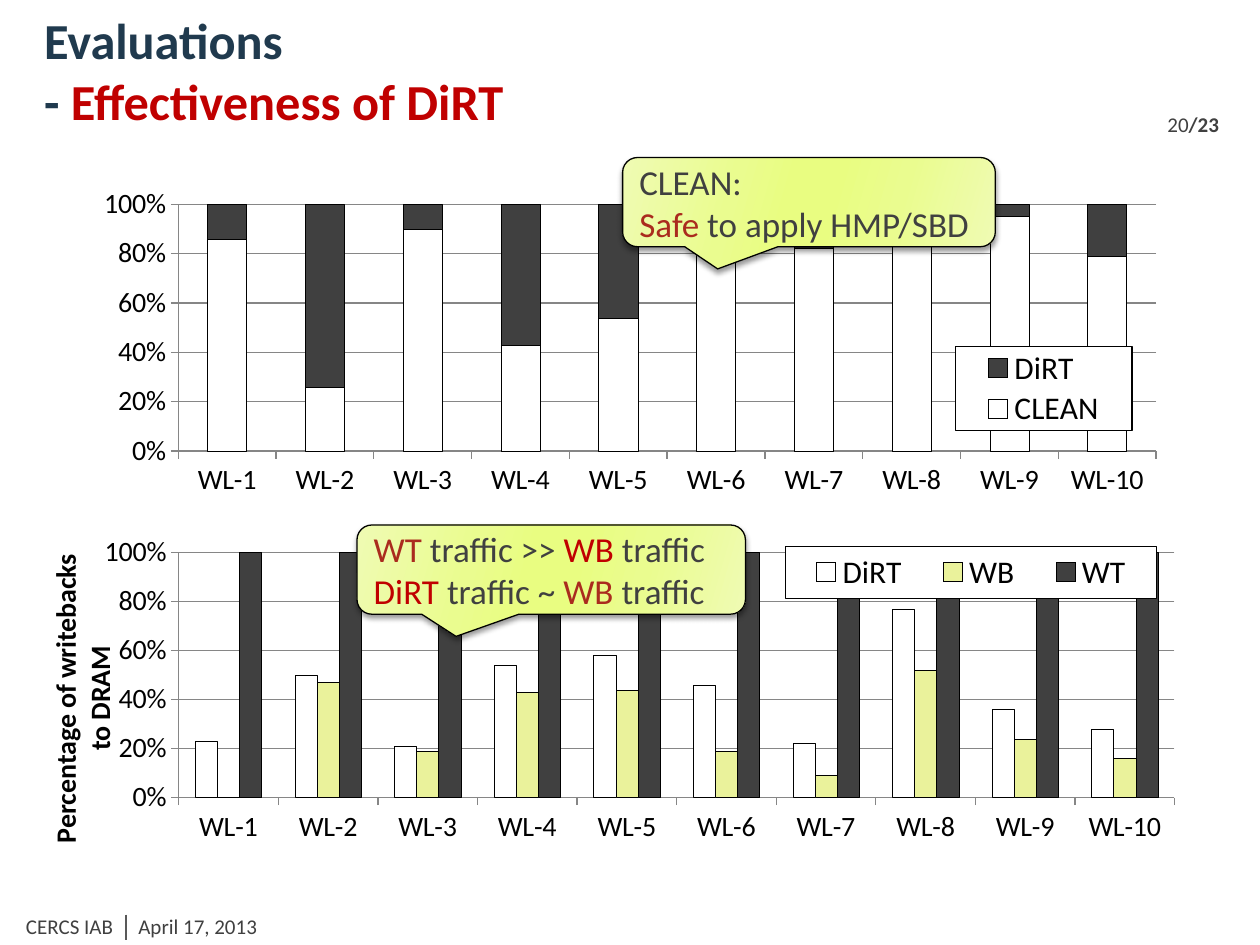
from lxml.etree import SubElement
from pptx import Presentation
from pptx.chart.data import CategoryChartData as ChartData
from pptx.dml.color import RGBColor
from pptx.enum.chart import XL_CHART_TYPE as ChartType, XL_LEGEND_POSITION as LegendPosition
from pptx.enum.chart import XL_TICK_MARK as TickMark
from pptx.enum.shapes import MSO_CONNECTOR as Connector, MSO_SHAPE as Shape
from pptx.enum.text import MSO_ANCHOR as Anchor, MSO_AUTO_SIZE as AutoSize, PP_ALIGN as Align
from pptx.oxml import parse_xml
from pptx.oxml.ns import nsdecls, qn
from pptx.util import Inches, Pt

COLORS = {
    "navy": "203A4E", "red": "C00000", "brick": "AA2B1E", "dark": "404040",
    "rule": "595959", "grid": "868686", "black": "000000", "white": "FFFFFF", "lime": "EAF29B",
}
GRADIENT = {0: "EFFBB3", 30: "EAFC8F", 45: "E9FD81", 55: "E9FD81", 73: "EAFC8F", 100: "EFFBB3"}
FONT = "Calibri"
COLUMNS, ROWS = 120, 90
WORKLOADS = [f"WL-{number}" for number in range(1, 11)]
BLOCKS = {
    "CLEAN": ("white", [0.86, 0.26, 0.9, 0.43, 0.54, 0.91, 0.82, 0.88, 0.95, 0.79]),
    "DiRT": ("dark", [0.14, 0.74, 0.1, 0.57, 0.46, 0.09, 0.18, 0.12, 0.05, 0.21]),
}
WRITEBACKS = {
    "DiRT": ("white", [0.23, 0.5, 0.21, 0.54, 0.58, 0.46, 0.22, 0.77, 0.36, 0.28]),
    "WB": ("lime", [0, 0.47, 0.19, 0.43, 0.44, 0.19, 0.09, 0.52, 0.24, 0.16]),
    "WT": ("dark", [1] * 10),
}


def color(name):
    return RGBColor.from_string(COLORS[name])


def cells(column, row, width, height):
    unit_x, unit_y = Inches(10) / COLUMNS, Inches(7.5) / ROWS
    return [round(value) for value in
            (column * unit_x, row * unit_y, width * unit_x, height * unit_y)]


def set_font(font, size, name=None, bold=None):
    font.name, font.size, font.bold = FONT, Pt(size), bold
    if name:
        font.color.rgb = color(name)


def set_line(line, name, width):
    line.color.rgb = color(name)
    line.width = Pt(width)


def write_runs(paragraph, runs):
    for text, name in runs:
        run = paragraph.add_run()
        run.text = text
        run.font.color.rgb = color(name)


def add_title(slide):
    title = slide.shapes.title
    title.left, title.top, title.width, title.height = cells(3, 2, 111, 11)
    frame = title.text_frame
    frame.auto_size = AutoSize.NONE
    frame.vertical_anchor = Anchor.BOTTOM
    paragraph = frame.paragraphs[0]
    paragraph.alignment = Align.LEFT
    set_font(paragraph.font, 28.8, bold=True)
    write_runs(paragraph, [("Evaluations", "navy")])
    paragraph.add_line_break()
    write_runs(paragraph, [("- ", "navy"), ("Effectiveness of DiRT", "red")])


def add_label(slide, place, text, bold_text=""):
    frame = slide.shapes.add_textbox(*cells(*place)).text_frame
    frame.word_wrap = False
    paragraph = frame.paragraphs[0]
    set_font(paragraph.font, 12, "dark")
    paragraph.add_run().text = text
    if bold_text:
        run = paragraph.add_run()
        run.text = bold_text
        run.font.bold = True


def add_rule(slide, column, top, bottom):
    x, y, _, height = cells(column, top, 0, bottom - top)
    rule = slide.shapes.add_connector(Connector.STRAIGHT, x, y, x, y + height)
    set_line(rule.line, "rule", 1)
    SubElement(rule._element.spPr, qn("a:effectLst"))


def set_layout(element, before, inner=False, **shares):
    for old in element.findall(qn("c:layout")):
        element.remove(old)
    layout = parse_xml(f"<c:layout {nsdecls('c')}><c:manualLayout/></c:layout>")
    values = {"layoutTarget": "inner"} if inner else {}
    values.update(xMode="edge", yMode="edge", **shares)
    for tag, value in values.items():
        SubElement(layout[0], qn(f"c:{tag}")).set("val", str(value))
    if before is None:
        element.insert(0, layout)
    else:
        element.find(qn(before)).addnext(layout)


def style_axes(chart):
    for axis in (chart.category_axis, chart.value_axis):
        axis.major_tick_mark = TickMark.OUTSIDE
        axis.minor_tick_mark = TickMark.NONE
        set_line(axis.format.line, "grid", 0.75)
    axis.minimum_scale, axis.maximum_scale, axis.major_unit = 0, 1, 0.2
    axis.tick_labels.number_format = "0%"
    axis.tick_labels.number_format_is_linked = False
    axis.has_major_gridlines = True
    set_line(axis.major_gridlines.format.line, "grid", 0.75)


def style_legend(chart, place):
    chart.has_legend = True
    legend = chart.legend
    legend.position = LegendPosition.RIGHT
    legend.include_in_layout = True
    set_font(legend.font, 18, "black")
    set_layout(legend._element, "c:legendPos", **place)
    legend._element.find(qn("c:txPr")).addprevious(parse_xml(
        f'<c:spPr {nsdecls("c", "a")}>'
        f'<a:solidFill><a:srgbClr val="{COLORS["white"]}"/></a:solidFill>'
        f'<a:ln w="9525"><a:solidFill><a:srgbClr val="{COLORS["black"]}"/></a:solidFill></a:ln>'
        '</c:spPr>'))


def add_columns(slide, kind, place, series_table, plot_place, legend_place):
    data = ChartData(number_format="0%")
    data.categories = WORKLOADS
    for name, (_, values) in series_table.items():
        data.add_series(name, values)
    chart = slide.shapes.add_chart(kind, *cells(*place), data).chart
    chart.has_title = False
    set_font(chart.font, 16, "black")
    plot = chart.plots[0]
    plot.gap_width = 150
    plot.overlap = 100 if kind == ChartType.COLUMN_STACKED else 0
    plot.vary_by_categories = False
    for series, (fill_name, _) in zip(plot.series, series_table.values()):
        series.format.fill.solid()
        series.format.fill.fore_color.rgb = color(fill_name)
        set_line(series.format.line, "black", 0.25)
    style_axes(chart)
    style_legend(chart, legend_place)
    set_layout(chart._chartSpace.chart.plotArea, None, inner=True, **plot_place)
    return chart


def add_axis_title(axis, lines, x, y):
    title = axis.axis_title
    frame = title.text_frame
    frame.text = "\n".join(lines)
    frame._txBody.bodyPr.set("rot", "-5400000")
    frame._txBody.bodyPr.set("vert", "horz")
    for paragraph in frame.paragraphs:
        set_font(paragraph.font, 16, "black", True)
    set_layout(title._element, "c:tx", x=x, y=y)


def add_callout(slide, place, lines):
    shape = slide.shapes.add_shape(Shape.ROUNDED_RECTANGULAR_CALLOUT, *cells(*place))
    for index, value in enumerate((-0.245, 0.749, 0.167)):
        shape.adjustments[index] = value
    stops = "".join(f'<a:gs pos="{position * 1000}"><a:srgbClr val="{value}"/></a:gs>'
                    for position, value in GRADIENT.items())
    shape._element.spPr.find(qn("a:prstGeom")).addnext(parse_xml(
        f'<a:gradFill {nsdecls("a")} rotWithShape="1"><a:gsLst>{stops}</a:gsLst>'
        '<a:lin ang="960000" scaled="0"/></a:gradFill>'))
    set_line(shape.line, "black", 0.75)
    shape.shadow.inherit = False
    shape._element.spPr.find(qn("a:effectLst")).append(parse_xml(
        f'<a:outerShdw {nsdecls("a")} blurRad="38100" dist="25400" dir="5400000" rotWithShape="0">'
        f'<a:srgbClr val="{COLORS["black"]}"><a:alpha val="40000"/></a:srgbClr></a:outerShdw>'))
    frame = shape.text_frame
    frame.word_wrap = True
    frame.vertical_anchor = Anchor.MIDDLE
    for index, runs in enumerate(lines):
        paragraph = frame.add_paragraph() if index else frame.paragraphs[0]
        paragraph.alignment = Align.LEFT
        set_font(paragraph.font, 20)
        write_runs(paragraph, runs)


def main():
    presentation = Presentation()
    presentation.slide_width, presentation.slide_height = Inches(10), Inches(7.5)
    slide = presentation.slides.add_slide(presentation.slide_layouts[5])
    add_label(slide, (1.3, 86.4, 11, 3), "CERCS IAB")
    add_label(slide, (12, 86.4, 38, 3), "April 17, 2013")
    add_rule(slide, 12, 87.1, 89.5)
    add_label(slide, (110, 10, 8, 3), "20", "/23")
    add_title(slide)
    add_columns(slide, ChartType.COLUMN_STACKED, (7, 17, 105, 32), BLOCKS,
                dict(x=0.095, y=0.077, w=0.887, h=0.735), dict(x=0.8, y=0.5, w=0.16, h=0.25))
    chart = add_columns(slide, ChartType.COLUMN_CLUSTERED, (3, 49, 114, 38), WRITEBACKS,
                        dict(x=0.123, y=0.095, w=0.832, h=0.615),
                        dict(x=0.63, y=0.08, w=0.31, h=0.13))
    add_axis_title(chart.value_axis, ["Percentage of writebacks", "to DRAM"], 0.01, 0.09)
    add_callout(slide, (59.3, 15, 35.5, 8.5), [
        [("CLEAN:", "dark")], [("Safe", "brick"), (" to apply HMP/SBD", "dark")]])
    add_callout(slide, (34, 50, 37, 8.5), [
        [("WT", "brick"), (" traffic >> ", "dark"), ("WB ", "red"), ("traffic", "dark")],
        [("DiRT ", "red"), ("traffic ~ ", "dark"), ("WB", "brick"), (" traffic", "dark")]])
    presentation.save("out.pptx")


if __name__ == "__main__":
    main()
